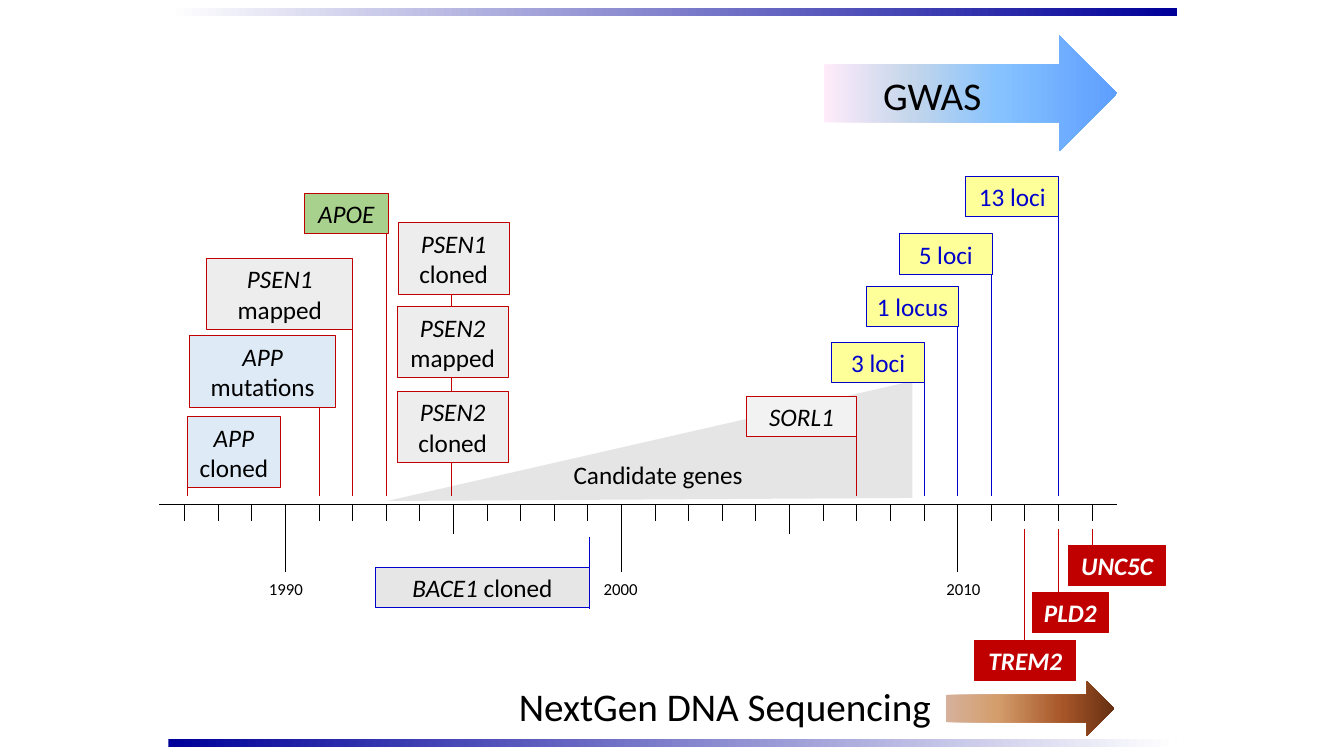
from lxml import etree
from pptx import Presentation
from pptx.dml.color import RGBColor
from pptx.enum.shapes import MSO_CONNECTOR, MSO_SHAPE
from pptx.enum.text import MSO_ANCHOR, PP_ALIGN
from pptx.oxml.ns import qn
from pptx.util import Inches, Pt

RECTANGLE = MSO_SHAPE.RECTANGLE
ARROW = MSO_SHAPE.RIGHT_ARROW
STRAIGHT = MSO_CONNECTOR.STRAIGHT
MIDDLE = MSO_ANCHOR.MIDDLE
LEFT, CENTER = PP_ALIGN.LEFT, PP_ALIGN.CENTER

FONT = "Calibri"
BLACK, WHITE, RED, BLUE, NAVY = "000000", "FFFFFF", "C00000", "0000CC", "000099"
GRAY, PALE_BLUE, YELLOW = "EDEDED", "DEEBF7", "FFFF99"
AXIS_Y = 5
STEM_FOOT = 4.92

STEMS = [
    (1987.1, 4.58, STEM_FOOT, RED),
    (1991, 3.33, STEM_FOOT, RED),
    (1992, 2.58, STEM_FOOT, RED),
    (1993, 2.17, STEM_FOOT, RED),
    (1994.95, 2.5, STEM_FOOT, RED),
    (2007, 3.94, STEM_FOOT, RED),
    (2009, 3.69, STEM_FOOT, BLUE),
    (2010, 2.92, STEM_FOOT, BLUE),
    (2011, 2.72, STEM_FOOT, BLUE),
    (2013, 2, STEM_FOOT, BLUE),
    (1999.05, 5.33, 6.04, BLUE),
    (2012, 5.25, 6.36, RED),
    (2013, 5.25, 5.93, RED),
    (2014, 5.25, 5.5, RED),
]

GENE_BOXES = [
    ("PSEN2", " cloned", (3.94, 3.88, 1.1, 0.71), GRAY, RED),
    ("PSEN2", " mapped", (3.94, 3.04, 1.1, 0.71), GRAY, RED),
    ("PSEN1", " cloned", (3.95, 2.21, 1.1, 0.71), GRAY, RED),
    ("APP", " mutations", (1.88, 3.33, 1.45, 0.71), PALE_BLUE, RED),
    ("APP", " cloned", (1.86, 4.13, 0.92, 0.71), PALE_BLUE, RED),
    ("PSEN1", " mapped", (2.05, 2.56, 1.45, 0.71), GRAY, RED),
    ("APOE", "", (3.02, 1.92, 0.83, 0.4), "A9D18E", RED),
    ("SORL1", "", (7.4, 3.93, 1.1, 0.4), "F2F2F2", RED),
    ("BACE1", " cloned", (3.72, 5.63, 2.13, 0.4), "E7E6E6", BLUE),
]

LOCI_BOXES = [
    ("3 loci", 8.25, 3.4),
    ("1 locus", 8.59, 2.84),
    ("5 loci", 8.92, 2.32),
    ("13 loci", 9.58, 1.75),
]

SEQUENCING_BOXES = [
    ("TREM2", (9.67, 6.35, 1, 0.4)),
    ("PLD2", (10.24, 5.88, 0.75, 0.4)),
    ("UNC5C", (10.6, 5.41, 0.96, 0.4)),
]


def color(value):
    return RGBColor.from_string(value)


def year_x(year):
    return 2.83 + (year - 1990) / 3


def add_line(page, x, top, end_x, bottom, stroke=BLACK):
    line = page.shapes.add_connector(
        STRAIGHT, Inches(x), Inches(top), Inches(end_x), Inches(bottom))
    line.line.color.rgb = color(stroke)
    line.line.width = Pt(0.5)
    etree.SubElement(line._element.spPr, qn("a:effectLst"))


def write(shape, runs, size, ink, align=CENTER, bold=False):
    para = shape.text_frame.paragraphs[0]
    para.alignment = align
    para.font.name = FONT
    para.font.size = Pt(size)
    para.font.bold = bold
    para.font.color.rgb = color(ink)
    for text, italic in runs:
        if text:
            span = para.add_run()
            span.text = text
            span.font.italic = italic


def add_label(page, text, place, size, align=CENTER):
    box = page.shapes.add_textbox(*map(Inches, place))
    box.text_frame.word_wrap = True
    write(box, [(text, False)], size, BLACK, align)


def add_box(page, runs, place, fill, stroke, ink=BLACK, bold=False):
    box = page.shapes.add_shape(RECTANGLE, *map(Inches, place))
    box.shadow.inherit = False
    box.fill.solid()
    box.fill.fore_color.rgb = color(fill)
    box.line.color.rgb = color(stroke)
    box.line.width = Pt(0.75)
    box.text_frame.word_wrap = place[3] > 0.5
    box.text_frame.vertical_anchor = MIDDLE
    write(box, runs, 18, ink, bold=bold)


def add_gradient(page, kind, place, stops):
    shape = page.shapes.add_shape(kind, *map(Inches, place))
    shape.shadow.inherit = False
    shape.line.fill.background()
    shape.fill.gradient()
    shape.fill.gradient_angle = 0
    stop_list = shape._element.spPr.find(".//" + qn("a:gsLst"))
    for old_stop in list(stop_list):
        stop_list.remove(old_stop)
    for percent, value in stops:
        stop = etree.SubElement(stop_list, qn("a:gs"), pos=str(percent * 1000))
        etree.SubElement(stop, qn("a:srgbClr"), val=value)


def add_candidate_wedge(page):
    builder = page.shapes.build_freeform(Inches(3.84), Inches(4.97))
    builder.add_line_segments(
        [(Inches(9.05), Inches(3.78)), (Inches(9.05), Inches(4.94))])
    wedge = builder.convert_to_shape()
    wedge.shadow.inherit = False
    wedge.fill.solid()
    wedge.fill.fore_color.rgb = color("E5E5E5")
    wedge.line.fill.background()
    add_label(page, "Candidate genes", (5.59, 4.51, 2.12, 0.4), 18, LEFT)


def add_axis(page):
    add_line(page, 1.58, AXIS_Y, 11.08, AXIS_Y)
    for year in range(1987, 2015):
        length = 0.67 if year % 10 == 0 else 0.3 if year % 5 == 0 else 0.17
        x = year_x(year)
        add_line(page, x, AXIS_Y, x, AXIS_Y + length)
    for year, left in ((1990, 2.5), (2000, 5.82), (2010, 9.22)):
        add_label(page, str(year), (left, 5.69, 0.67, 0.3), 12)


def main():
    deck = Presentation()
    deck.slide_width = Inches(13.33)
    deck.slide_height = Inches(7.5)
    page = deck.slides.add_slide(deck.slide_layouts[6])

    add_gradient(page, RECTANGLE, (1.67, 0.08, 10, 0.08), [(0, WHITE), (100, NAVY)])
    add_gradient(page, RECTANGLE, (1.67, 7.33, 10, 0.08), [(0, NAVY), (100, WHITE)])
    add_candidate_wedge(page)
    add_axis(page)

    for year, top, bottom, stroke in STEMS:
        add_line(page, year_x(year), top, year_x(year), bottom, stroke)
    for gene, event, place, fill, stroke in GENE_BOXES:
        add_box(page, [(gene, True), (event, False)], place, fill, stroke)
    for text, left, top in LOCI_BOXES:
        add_box(page, [(text, False)], (left, top, 0.92, 0.4), YELLOW, BLUE, BLUE)
    for gene, place in SEQUENCING_BOXES:
        add_box(page, [(gene, True)], place, RED, RED, WHITE, bold=True)

    add_gradient(page, ARROW, (8.17, 0.35, 2.91, 1.15),
                 [(0, "FFEBFA"), (30, "C4D6EB"), (60, "85C2FF"), (100, "5E9EFF")])
    add_label(page, "GWAS", (8.66, 0.66, 1.89, 0.57), 28, LEFT)
    add_label(page, "NextGen DNA Sequencing", (4.5, 6.72, 5.38, 0.57), 28)
    add_gradient(page, ARROW, (9.38, 6.76, 1.67, 0.54),
                 [(0, "D6B19C"), (30, "D49E6C"), (70, "A65528"), (100, "663012")])
    deck.save("out.pptx")


if __name__ == "__main__":
    main()
